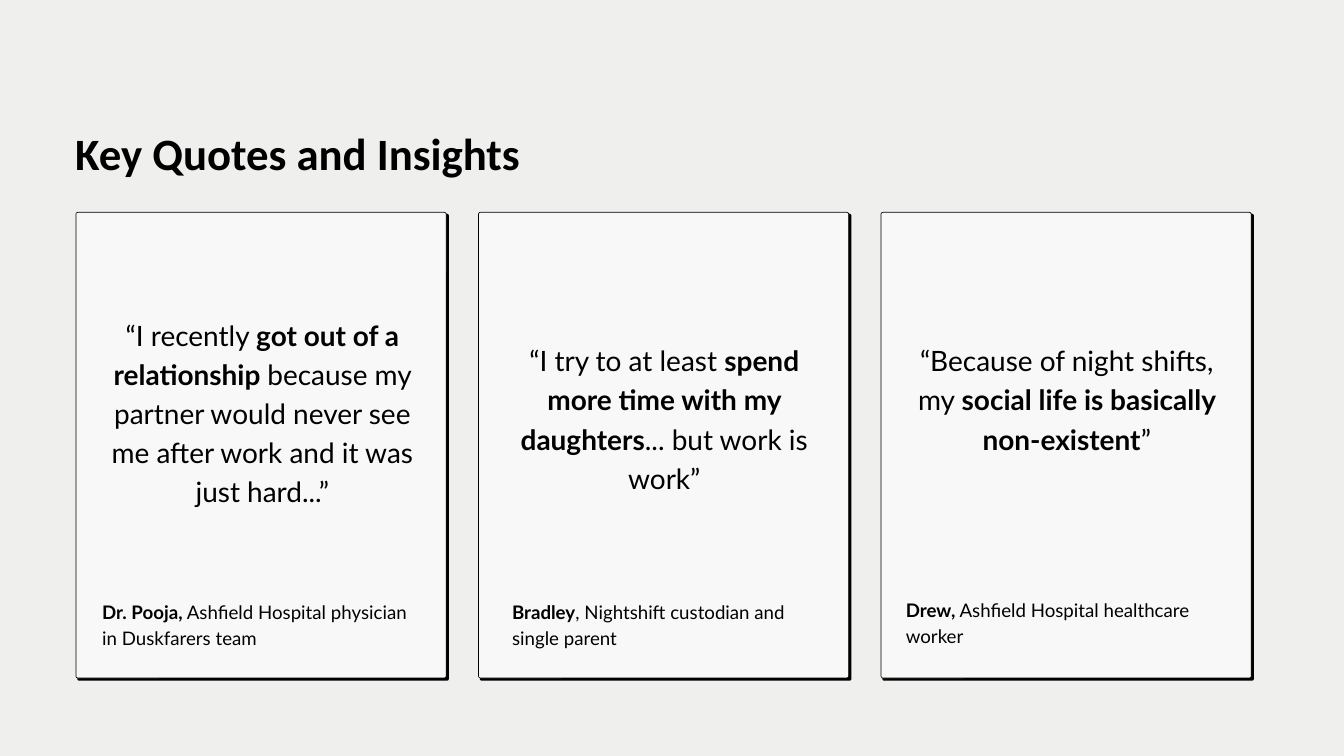
import pptx
import pptx.dml.color
import pptx.enum.shapes
import pptx.enum.text
import pptx.util

PX = 9144  # EMU in one px, 100 px to the inch

THEME = {
    "paper": "EFEFEE",
    "card": "F8F8F8",
    "ink": "000000",
    "title": {"name": "Calibri", "size": 48, "leading": 56.6},
    "quote": {"name": "Lato", "size": 30, "leading": 42},
    "speaker": {"name": "Lato", "size": 20, "leading": 28},
}
ALIGN = pptx.enum.text.PP_ALIGN

CARD_LEFT, CARD_TOP, CARD_PITCH = 113, 316, 599
CARD_WIDTH, CARD_HEIGHT, CORNER = 551, 693, 3

# Each quote and speaker: left, top, width, height, then (text, bold) spans
CARDS = [
    {
        "quote": ((152, 465, 477, 295), [
            ("“I recently ", False),
            ("got out of a relationship ", True),
            ("because my partner would never see me after work and it was just hard...”", False),
        ]),
        "speaker": ((152, 888, 477, 80), [
            ("Dr. Pooja,", True),
            (" Ashfield Hospital physician in Duskfarers team", False),
        ]),
    },
    {
        "quote": ((751, 503, 475, 231), [
            ("“I try to at least ", False),
            ("spend more time with my daughters", True),
            ("... but work is work”", False),
        ]),
        "speaker": ((762, 888, 477, 80), [
            ("Bradley", True),
            (", Nightshift custodian and single parent", False),
        ]),
    },
    {
        "quote": ((1350, 503, 475, 174), [
            ("“Because of night shifts, my ", False),
            ("social life is basically non-existent", True),
            ("”", False),
        ]),
        "speaker": ((1348, 885, 477, 80), [
            ("Drew,", True),
            (" Ashfield Hospital healthcare worker", False),
        ]),
    },
]


def color(key):
    return pptx.dml.color.RGBColor.from_string(THEME[key])


def add_text(page, place, spans, style, align):
    """Add a one-paragraph text box without margins from (text, bold) spans."""
    box = page.shapes.add_textbox(*(length * PX for length in place))
    frame = box.text_frame
    frame_format = {"word_wrap": True, "margin_left": 0, "margin_top": 0,
                    "margin_right": 0, "margin_bottom": 0}
    for name, value in frame_format.items():
        setattr(frame, name, value)
    para = frame.paragraphs[0]
    para.alignment = align
    para.line_spacing = pptx.util.Pt(THEME[style]["leading"])
    for text, bold in spans:
        span = para.add_run()
        span.text = text
        span.font.color.rgb = color("ink")
        font_format = {"name": THEME[style]["name"], "bold": bold,
                       "size": pptx.util.Pt(THEME[style]["size"])}
        for name, value in font_format.items():
            setattr(span.font, name, value)


deck = pptx.Presentation()
deck.slide_width, deck.slide_height = 2000 * PX, 1125 * PX
page = deck.slides.add_slide(deck.slide_layouts[6])
page.background.fill.solid()
page.background.fill.fore_color.rgb = color("paper")

for index, card in enumerate(CARDS):
    left = CARD_LEFT + index * CARD_PITCH
    # A black panel shows at the right and bottom edges of the card face
    for offset, grow, fill in ((2, 2, "ink"), (0, 0, "card")):
        place = (left + offset, CARD_TOP + offset, CARD_WIDTH + grow, CARD_HEIGHT + grow)
        panel = page.shapes.add_shape(
            pptx.enum.shapes.MSO_SHAPE.ROUNDED_RECTANGLE, *(length * PX for length in place))
        panel.adjustments[0] = CORNER / CARD_WIDTH
        panel.shadow.inherit = False
        panel.fill.solid()
        panel.fill.fore_color.rgb = color(fill)
        if fill == "card":
            panel.line.color.rgb = color("ink")
            panel.line.width = PX
        else:
            panel.line.fill.background()

add_text(page, (112, 189, 1053, 78), [("Key Quotes and Insights", True)], "title", ALIGN.LEFT)
for card in CARDS:
    add_text(page, *card["quote"], "quote", ALIGN.CENTER)
    add_text(page, *card["speaker"], "speaker", ALIGN.LEFT)

deck.save("out.pptx")
